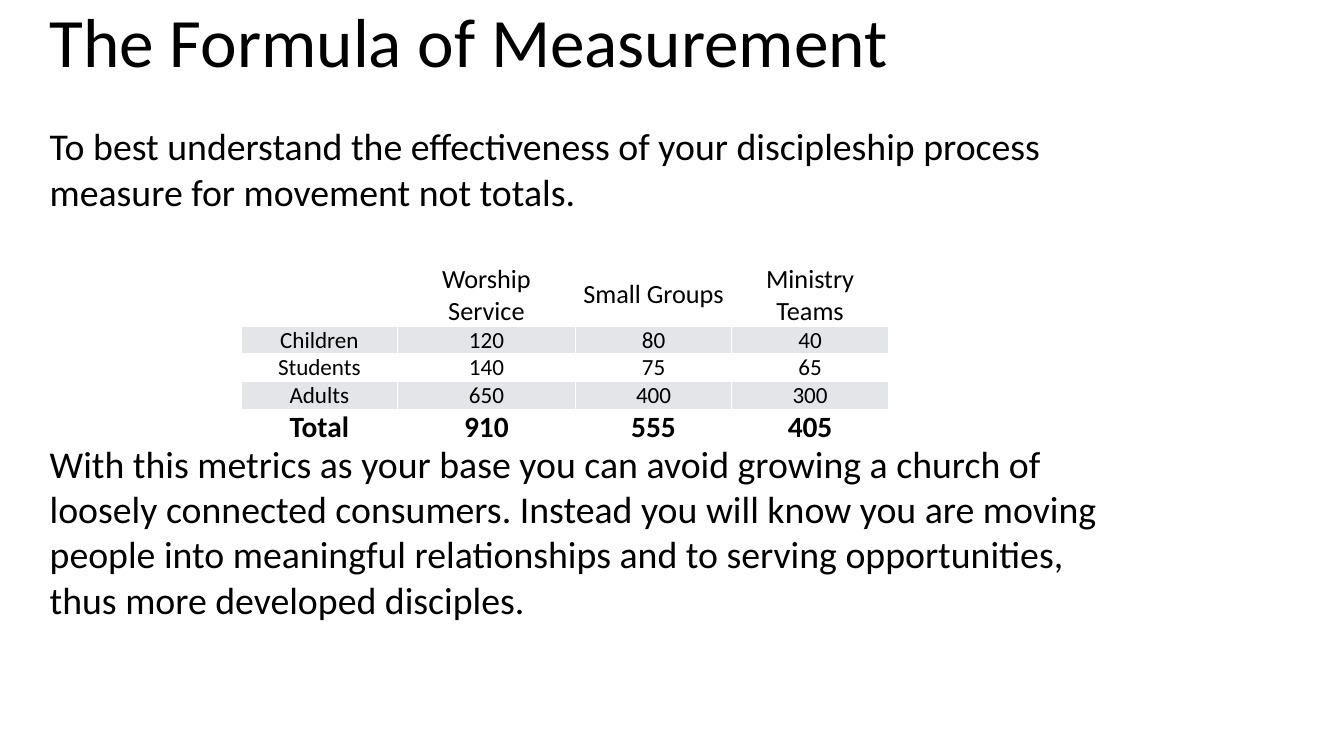
from pptx import Presentation
from pptx.dml.color import RGBColor
from pptx.enum.text import MSO_ANCHOR, PP_ALIGN
from pptx.util import Cm, Pt

COLORS = {"ink": "000000", "plain": "FFFFFF", "band": "E3E5E8"}

INTRO = ("To best understand the effectiveness of your discipleship process "
         "measure for movement not totals.")
CONCLUSION = ("With this metrics as your base you can avoid growing a church of "
              "loosely connected consumers. Instead you will know you are moving "
              "people into meaningful relationships and to serving opportunities, "
              "thus more developed disciples.")

HEADINGS = ["", "Worship Service", "Small Groups", "Ministry Teams"]
ATTENDANCE = [
    ("Children", 120, 80, 40),
    ("Students", 140, 75, 65),
    ("Adults", 650, 400, 300),
]
TOTALS = ["Total"] + [sum(column) for column in list(zip(*ATTENDANCE))[1:]]


class SlideWriter:
    font_name = "Calibri"

    def __init__(self, slide):
        self.slide = slide

    def color(self, key):
        return RGBColor.from_string(COLORS[key])

    def run(self, paragraph, wording, size, bold=False):
        run = paragraph.add_run()
        run.text = wording
        run.font.name = self.font_name
        run.font.size = Pt(size)
        run.font.bold = bold
        run.font.color.rgb = self.color("ink")

    def text(self, left, top, width, height, passages):
        box = self.slide.shapes.add_textbox(Cm(left), Cm(top), Cm(width), Cm(height))
        frame = box.text_frame
        frame.word_wrap = True
        frame.vertical_anchor = MSO_ANCHOR.MIDDLE
        frame.margin_left = frame.margin_right = Cm(0.15)
        frame.margin_top = frame.margin_bottom = Cm(0.15)
        for index, (wording, size, gap, pitch) in enumerate(passages):
            paragraph = frame.add_paragraph() if index else frame.paragraphs[0]
            paragraph.space_before = Pt(gap)
            if pitch:
                paragraph.line_spacing = Pt(pitch)
            self.run(paragraph, wording, size)

    def table(self, left, top, widths, rows):
        height = sum(row_height for _, row_height, _, _ in rows)
        table = self.slide.shapes.add_table(
            len(rows), len(widths), Cm(left), Cm(top), Cm(sum(widths)), Cm(height)
        ).table
        for column, width in zip(table.columns, widths):
            column.width = Cm(width)
        for index, (entries, row_height, size, bold) in enumerate(rows):
            table.rows[index].height = Cm(row_height)
            for cell, entry in zip(table.rows[index].cells, entries):
                cell.fill.solid()
                cell.fill.fore_color.rgb = self.color("band" if index % 2 else "plain")
                cell.vertical_anchor = MSO_ANCHOR.MIDDLE
                cell.margin_left = cell.margin_right = Cm(0.18)
                cell.margin_top = cell.margin_bottom = Cm(0)
                paragraph = cell.text_frame.paragraphs[0]
                paragraph.alignment = PP_ALIGN.CENTER
                if entry != "":
                    self.run(paragraph, str(entry), size, bold)


def main():
    deck = Presentation()
    deck.slide_width, deck.slide_height = Cm(45.16), Cm(25.4)
    writer = SlideWriter(deck.slides.add_slide(deck.slide_layouts[6]))
    writer.text(1.52, 0.25, 36.55, 20.32, [
        ("The Formula of Measurement", 66, 0, None),
        (INTRO, 36, 40, 43.2),
        (CONCLUSION, 36, 216, 43.2),
    ])
    writer.table(8.1, 8.84, [5.26, 5.97, 5.26, 5.26], [
        (HEADINGS, 1.02, 25, False),
        *[(group, 0.74, 22, False) for group in ATTENDANCE],
        (TOTALS, 0.99, 28, True),
    ])
    deck.save("out.pptx")


if __name__ == "__main__":
    main()
